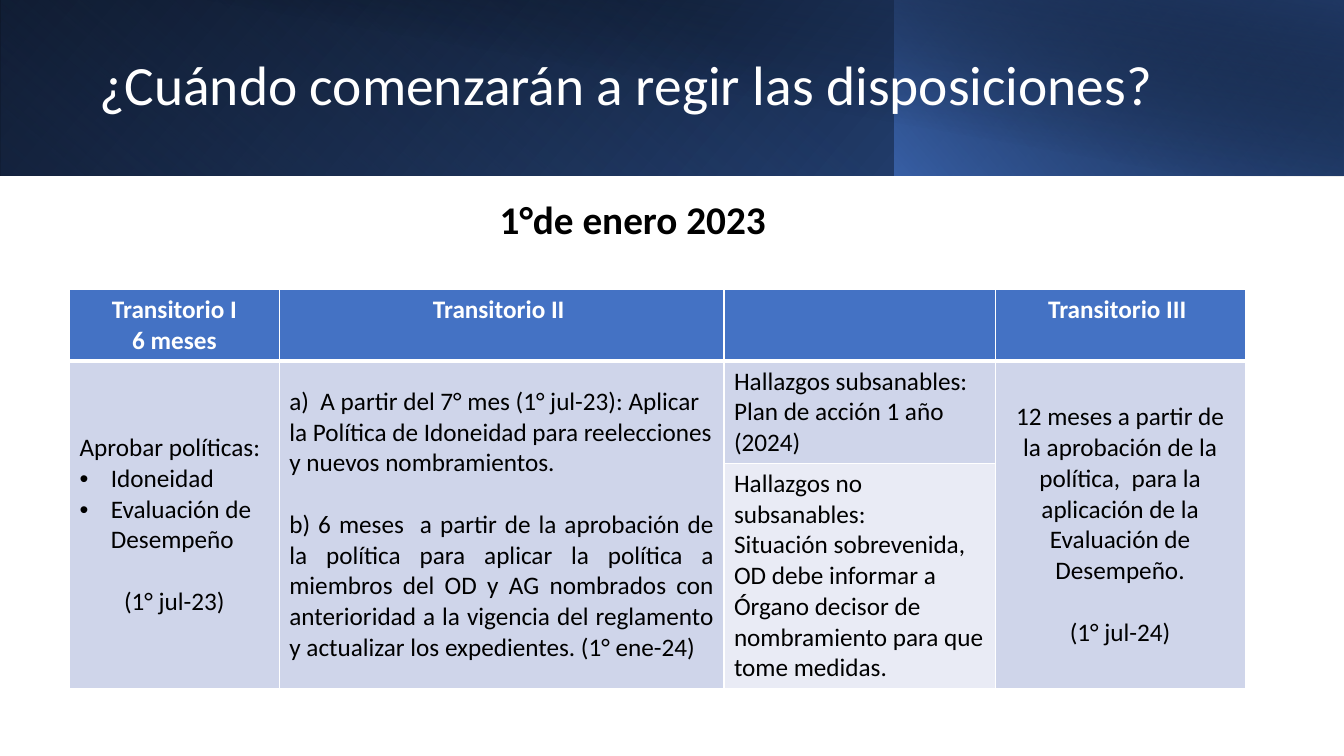
from pptx import Presentation
from pptx.dml.color import RGBColor
from pptx.enum.shapes import MSO_SHAPE
from pptx.enum.text import MSO_ANCHOR, MSO_AUTO_SIZE, PP_ALIGN
from pptx.oxml import parse_xml
from pptx.oxml.ns import nsdecls
from pptx.util import Inches, Pt

WHITE, BLACK = RGBColor(255, 255, 255), RGBColor(0, 0, 0)
BLUE = RGBColor(0x44, 0x72, 0xC4)
NAVY = RGBColor(0x20, 0x38, 0x64)
MID = RGBColor(0x2F, 0x55, 0x97)
PALE = RGBColor(0xCF, 0xD5, 0xEA)
LIGHT = RGBColor(0xE9, 0xEB, 0xF5)
LEFT, MIDDLE, JUST = PP_ALIGN.LEFT, PP_ALIGN.CENTER, PP_ALIGN.JUSTIFY

# Content
TITLE = "¿Cuándo comenzarán a regir las disposiciones? "
DATE = "1°de enero 2023"
HEADS = [["Transitorio I", "6 meses"], ["Transitorio II "], [], ["Transitorio III "]]
# (row, column, rows spanned, fill, [(text, alignment, bullet, gap before)])
BODY = [
    (1, 0, 2, PALE, [
        ("Aprobar políticas:", LEFT, False, 0),
        ("Idoneidad", LEFT, True, 0),
        ("Evaluación de Desempeño", LEFT, True, 0),
        ("(1° jul-23)", MIDDLE, False, 22)]),
    (1, 1, 2, PALE, [
        ("a)  A partir del 7° mes (1° jul-23): Aplicar la Política de Idoneidad "
         "para reelecciones y nuevos nombramientos.", LEFT, False, 0),
        ("b) 6 meses  a partir de la aprobación de la política para aplicar la "
         "política a miembros del OD y AG nombrados con anterioridad a la vigencia "
         "del reglamento y actualizar los expedientes. (1° ene-24)", JUST, False, 22)]),
    (1, 2, 1, PALE, [
        ("Hallazgos subsanables: Plan de acción 1 año (2024)", LEFT, False, 0)]),
    (2, 2, 1, LIGHT, [
        ("Hallazgos no subsanables:", LEFT, False, 0),
        ("Situación sobrevenida, OD debe informar a Órgano decisor de "
         "nombramiento para que tome medidas.", LEFT, False, 0)]),
    (1, 3, 2, PALE, [
        ("12 meses a partir de la aprobación de la política,  para la aplicación "
         "de la Evaluación de Desempeño.", MIDDLE, False, 0),
        ("(1° jul-24)", MIDDLE, False, 22)]),
]
COLS = [2.08, 4.41, 2.69, 2.48]
ROWS = [0.71, 1.01, 2.23]
# (box, rotation, flipped, angle, [(stop, colour, opacity)])
BANDS = [
    ((0, 0, 13.33, 1.74), 0, True, 140, [(0, BLACK, 100), (100, MID, 100)]),
    ((0, 0, 8.88, 1.74), 180, True, 230, [(20, BLUE, 0), (100, NAVY, 55)]),
    ((8.87, 0, 4.46, 1.74), 0, True, 220, [(0, BLUE, 66), (100, BLACK, 30)]),
    ((0.5, 0, 12.83, 1.75), 0, False, 280, [(50, BLACK, 0), (99, NAVY, 52)]),
]


def style(font, **form):
    for key, value in {"name": "Calibri", **form}.items():
        setattr(font, key, value)


def paint(shape, angle, stops):
    marks = "".join(
        f'<a:gs pos="{pos * 1000}"><a:srgbClr val="{tint}">'
        f'<a:alpha val="{clear * 1000}"/></a:srgbClr></a:gs>'
        for pos, tint, clear in stops)
    props = shape._element.spPr
    props.prstGeom.addnext(parse_xml(
        f'<a:gradFill {nsdecls("a")} rotWithShape="1"><a:gsLst>{marks}</a:gsLst>'
        f'<a:lin ang="{angle * 60000}" scaled="0"/></a:gradFill>'))


def edge(cell, bottom):
    props = cell._tc.get_or_add_tcPr()
    for side, width in (("L", 1), ("R", 1), ("T", 1), ("B", bottom)):
        props.append(parse_xml(
            f'<a:ln{side} {nsdecls("a")} w="{width * 12700}"><a:solidFill>'
            f'<a:srgbClr val="{WHITE}"/></a:solidFill></a:ln{side}>'))


def write(frame, lines, **form):
    for i, (text, align, bullet, gap) in enumerate(lines):
        para = frame.paragraphs[0] if i == 0 else frame.add_paragraph()
        para.alignment, para.space_before = align, Pt(gap)
        run = para.add_run()
        run.text = text
        style(run.font, **form)
        if bullet:
            props = para._p.get_or_add_pPr()
            props.set("marL", str(Inches(0.31)))
            props.set("indent", str(Inches(-0.31)))
            props.append(parse_xml(f'<a:buFont {nsdecls("a")} typeface="Arial"/>'))
            props.append(parse_xml(f'<a:buChar {nsdecls("a")} char="•"/>'))


deck = Presentation()
deck.slide_width, deck.slide_height = Inches(13.33), Inches(7.5)
slide = deck.slides.add_slide(deck.slide_layouts[5])
shapes = slide.shapes

# Header bands
for box, turn, flip, angle, stops in BANDS:
    band = shapes.add_shape(MSO_SHAPE.RECTANGLE, *map(Inches, box))
    band.shadow.inherit = False
    band.line.fill.background()
    band.rotation = turn
    if flip:
        band._element.spPr.xfrm.set("flipH", "1")
    paint(band, angle, stops)

# Title, brought in front of the bands
title = shapes.title
shapes._spTree.append(title._element)
title.left, title.top, title.width, title.height = map(Inches, (0.86, 0.3, 10.82, 1.13))
frame = title.text_frame
frame.auto_size, frame.vertical_anchor = MSO_AUTO_SIZE.NONE, MSO_ANCHOR.MIDDLE
write(frame, [(TITLE, MIDDLE, False, 0)], size=Pt(39.6), color_rgb=None)
frame.paragraphs[0].line_spacing = 0.9
frame.paragraphs[0].runs[0].font.color.rgb = WHITE

# Table
grid = shapes.add_table(len(ROWS), len(COLS), Inches(0.69), Inches(2.87),
                        Inches(sum(COLS)), Inches(sum(ROWS))).table
for col, width in zip(grid.columns, COLS):
    col.width = Inches(width)
for row, height in zip(grid.rows, ROWS):
    row.height = Inches(height)
for r in range(len(ROWS)):
    for c in range(len(COLS)):
        cell = grid.cell(r, c)
        edge(cell, 3 if r == 0 else 1)
        cell.fill.solid()
        cell.fill.fore_color.rgb = PALE if r else BLUE


def fill_cell(cell, lines, tint, bold):
    write(cell.text_frame, lines, size=Pt(18), bold=bold)
    for para in cell.text_frame.paragraphs:
        for run in para.runs:
            run.font.color.rgb = tint


for c, names in enumerate(HEADS):
    fill_cell(grid.cell(0, c), [(name, MIDDLE, False, 0) for name in names], WHITE, True)
for r, c, span, tint, lines in BODY:
    cell = grid.cell(r, c)
    if span > 1:
        cell.merge(grid.cell(r + span - 1, c))
    cell.fill.fore_color.rgb = tint
    cell.vertical_anchor = MSO_ANCHOR.MIDDLE
    fill_cell(cell, lines, BLACK, False)

# Start date
date = shapes.add_textbox(*map(Inches, (3.63, 1.89, 5.29, 0.57))).text_frame
date.word_wrap = True
write(date, [(DATE, MIDDLE, False, 0)], size=Pt(28), bold=True)
date.paragraphs[0].runs[0].font.color.rgb = BLACK

deck.save("out.pptx")
